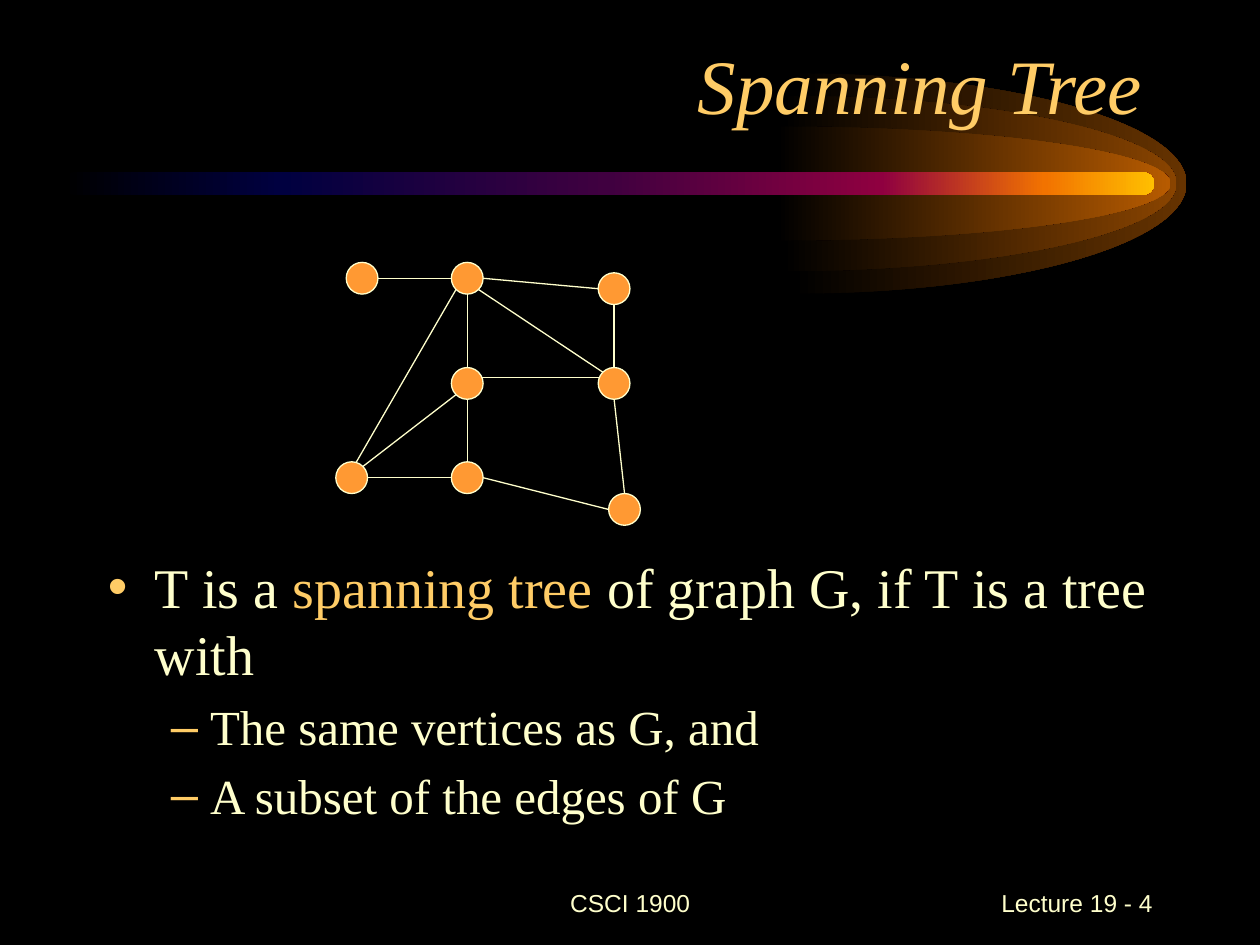
import math
from dataclasses import dataclass

from lxml import etree
from pptx import Presentation
from pptx.dml.color import RGBColor
from pptx.enum.shapes import MSO_CONNECTOR, MSO_SHAPE
from pptx.enum.text import MSO_ANCHOR, MSO_AUTO_SIZE, PP_ALIGN
from pptx.oxml.ns import qn
from pptx.util import Cm, Pt

ELLIPSE, ROUNDED = MSO_SHAPE.OVAL, MSO_SHAPE.ROUNDED_RECTANGLE
STRAIGHT = MSO_CONNECTOR.STRAIGHT
MIDDLE, BOTTOM = MSO_ANCHOR.MIDDLE, MSO_ANCHOR.BOTTOM
CENTER, RIGHT = PP_ALIGN.CENTER, PP_ALIGN.RIGHT
NO_AUTOFIT = MSO_AUTO_SIZE.NONE

COLORS = {
    "background": "000000",
    "text": "FFFFCC",
    "accent": "FFCC66",
    "vertex": "FF9933",
}
SERIF, SANS = "Times New Roman", "Arial"
RADIUS = 0.32
COMET_Y = 3.7
GLOW_WIDTH = 7.95
QUARTER_ARC = 0.55  # Bézier handle length for a quarter of an ellipse
DIAGONAL = math.sqrt(0.5)
SIDES = {
    "N": (0, -1), "S": (0, 1), "E": (1, 0), "W": (-1, 0),
    "NE": (DIAGONAL, -DIAGONAL), "NW": (-DIAGONAL, -DIAGONAL),
    "SE": (DIAGONAL, DIAGONAL), "SW": (-DIAGONAL, DIAGONAL),
    "NNE": (0.28, -0.96), "ENE": (0.93, -0.36), "WNW": (-0.93, -0.36),
}


@dataclass
class Glow:
    left: float
    half_height: float
    color: str


@dataclass
class Edge:
    start: str
    start_side: str
    end: str
    end_side: str


@dataclass
class Footer:
    text: str
    left: float
    width: float
    align: PP_ALIGN


@dataclass
class Bullet:
    runs: list[tuple[str, str]]
    level: int
    size: int
    mark: str
    margin: float
    hanging: float


GLOWS = [
    Glow(15.97, 2.22, "663300"),
    Glow(15.77, 1.77, "894400"),
    Glow(15.65, 1.15, "B75B00"),
]
TAIL_STOPS = [(0, "000000"), (20, "000040"), (50, "400040"),
              (75, "8F0040"), (90, "F27300"), (100, "FFBF00")]

VERTICES = {
    "a": (7.3, 5.61), "c": (12.38, 5.82), "g": (9.42, 9.63), "f": (7.09, 9.63),
    "b": (9.42, 5.61), "h": (12.59, 10.27), "d": (9.42, 7.73), "e": (12.38, 7.73),
}
EDGES = [
    Edge("f", "NE", "d", "SW"), Edge("f", "E", "g", "W"),
    Edge("f", "NNE", "b", "SW"), Edge("b", "S", "d", "N"),
    Edge("d", "S", "g", "N"), Edge("g", "E", "h", "W"),
    Edge("d", "ENE", "e", "WNW"), Edge("e", "NW", "b", "SE"),
    Edge("a", "E", "b", "W"), Edge("c", "S", "e", "N"),
    Edge("b", "E", "c", "W"), Edge("e", "S", "h", "N"),
]
FOOTERS = [
    Footer("CSCI 1900", 8.68, 8.05, CENTER),
    Footer("Lecture 19 - 4", 18.21, 5.28, RIGHT),
]
BULLETS = [
    Bullet([("T is a ", "text"), ("spanning tree", "accent"),
            (" of graph G, if T is a tree with", "text")], 0, 32, "•", 0.95, 0.95),
    Bullet([("The same vertices as G, and", "text")], 1, 28, "–", 2.06, 0.79),
    Bullet([("A subset of the edges of G", "text")], 1, 28, "–", 2.06, 0.79),
]


def rgb(name: str) -> RGBColor:
    return RGBColor.from_string(COLORS[name])


def place(shape, left: float, top: float, width: float, height: float) -> None:
    shape.left, shape.top = Cm(left), Cm(top)
    shape.width, shape.height = Cm(width), Cm(height)


def style_font(font, name: str, size: int) -> None:
    font.name, font.size = name, Pt(size)


def fill_gradient(shape, stops: list[tuple[int, str]]) -> None:
    """Fill from left to right, without outline or shadow."""
    shape.shadow.inherit = False
    shape.line.fill.background()
    shape.fill.gradient()
    shape.fill.gradient_angle = 0
    stop_list = shape.element.spPr.find(qn("a:gradFill")).find(qn("a:gsLst"))
    for old_stop in list(stop_list):
        stop_list.remove(old_stop)
    for percent, color in stops:
        stop = etree.SubElement(stop_list, qn("a:gs"), pos=str(percent * 1000))
        etree.SubElement(stop, qn("a:srgbClr"), val=color)


def draw_glow(slide, glow: Glow):
    """Draw the right half of an ellipse, its two straight sides bent into arcs."""
    left, width, half = Cm(glow.left), Cm(GLOW_WIDTH), Cm(glow.half_height)
    top = Cm(COMET_Y) - half
    builder = slide.shapes.build_freeform(left, top)
    builder.add_line_segments([(left + width, top + half), (left, top + 2 * half)], close=True)
    half_ellipse = builder.convert_to_shape()
    reach, rise = QUARTER_ARC * width, (1 - QUARTER_ARC) * half
    arcs = [[(reach, 0), (width, rise), (width, half)],
            [(width, 2 * half - rise), (reach, 2 * half), (0, 2 * half)]]
    sides = list(half_ellipse.element.spPr.iter(qn("a:lnTo")))
    for side, points in zip(sides, arcs):
        curve = etree.Element(qn("a:cubicBezTo"))
        for x, y in points:
            etree.SubElement(curve, qn("a:pt"), x=str(round(x)), y=str(round(y)))
        side.getparent().replace(side, curve)
    fill_gradient(half_ellipse, [(0, COLORS["background"]), (100, glow.color)])
    return half_ellipse


def draw_tail(slide):
    tail = slide.shapes.add_shape(ROUNDED, Cm(1.27), Cm(COMET_Y - 0.23), Cm(22), Cm(0.46))
    tail.adjustments[0] = 0.5
    fill_gradient(tail, TAIL_STOPS)
    return tail


def draw_footer(slide, footer: Footer) -> None:
    box = slide.shapes.add_textbox(Cm(footer.left), Cm(17.57), Cm(footer.width), Cm(1.27))
    box.text_frame.word_wrap = True
    box.text_frame.vertical_anchor = MIDDLE
    paragraph = box.text_frame.paragraphs[0]
    paragraph.text, paragraph.alignment = footer.text, footer.align
    style_font(paragraph.font, SANS, 14)
    paragraph.font.color.rgb = rgb("text")


def write_title(title) -> None:
    place(title, 1.69, 0.64, 21.59, 2.1)
    frame = title.text_frame
    frame.text = "Spanning Tree"
    frame.auto_size, frame.vertical_anchor = NO_AUTOFIT, BOTTOM
    paragraph = frame.paragraphs[0]
    paragraph.alignment = RIGHT
    style_font(paragraph.font, SERIF, 44)
    paragraph.font.italic = True
    paragraph.font.color.rgb = rgb("accent")


def write_bullet(paragraph, bullet: Bullet) -> None:
    paragraph.level = bullet.level
    style_font(paragraph.font, SERIF, bullet.size)
    for text, color in bullet.runs:
        run = paragraph.add_run()
        run.text = text
        run.font.color.rgb = rgb(color)
    properties = paragraph._p.get_or_add_pPr()
    properties.set("marL", str(Cm(bullet.margin)))
    properties.set("indent", str(-Cm(bullet.hanging)))
    mark_color = etree.Element(qn("a:buClr"))
    etree.SubElement(mark_color, qn("a:srgbClr"), val=COLORS["accent"])
    mark = etree.Element(qn("a:buChar"), char=bullet.mark)
    for position, part in enumerate((mark_color, mark)):
        properties.insert(position, part)


def write_body(body) -> None:
    place(body, 1.92, 11.01, 21.59, 6.15)
    frame = body.text_frame
    frame.auto_size = NO_AUTOFIT
    for index, bullet in enumerate(BULLETS):
        write_bullet(frame.add_paragraph() if index else frame.paragraphs[0], bullet)


def draw_vertex(slide, x: float, y: float) -> None:
    vertex = slide.shapes.add_shape(
        ELLIPSE, Cm(x - RADIUS), Cm(y - RADIUS), Cm(2 * RADIUS), Cm(2 * RADIUS))
    vertex.shadow.inherit = False
    vertex.fill.solid()
    vertex.fill.fore_color.rgb = rgb("vertex")
    vertex.line.color.rgb, vertex.line.width = rgb("text"), Pt(0.75)


def rim_point(vertex: str, side: str) -> tuple[Cm, Cm]:
    (x, y), (dx, dy) = VERTICES[vertex], SIDES[side]
    return Cm(x + RADIUS * dx), Cm(y + RADIUS * dy)


def draw_edge(slide, edge: Edge) -> None:
    line = slide.shapes.add_connector(
        STRAIGHT, *rim_point(edge.start, edge.start_side),
        *rim_point(edge.end, edge.end_side))
    line.line.color.rgb, line.line.width = rgb("text"), Pt(0.75)
    etree.SubElement(line.element.spPr, qn("a:effectLst"))


def main() -> None:
    deck = Presentation()
    deck.slide_width, deck.slide_height = Cm(25.4), Cm(19.05)
    slide = deck.slides.add_slide(deck.slide_layouts[1])
    slide.background.fill.solid()
    slide.background.fill.fore_color.rgb = rgb("background")
    title, body = slide.placeholders
    for part in [draw_glow(slide, glow) for glow in GLOWS] + [draw_tail(slide)]:
        title.element.addprevious(part.element)
    write_title(title)
    write_body(body)
    for footer in FOOTERS:
        draw_footer(slide, footer)
    for x, y in VERTICES.values():
        draw_vertex(slide, x, y)
    for edge in EDGES:
        draw_edge(slide, edge)
    deck.save("out.pptx")


if __name__ == "__main__":
    main()
